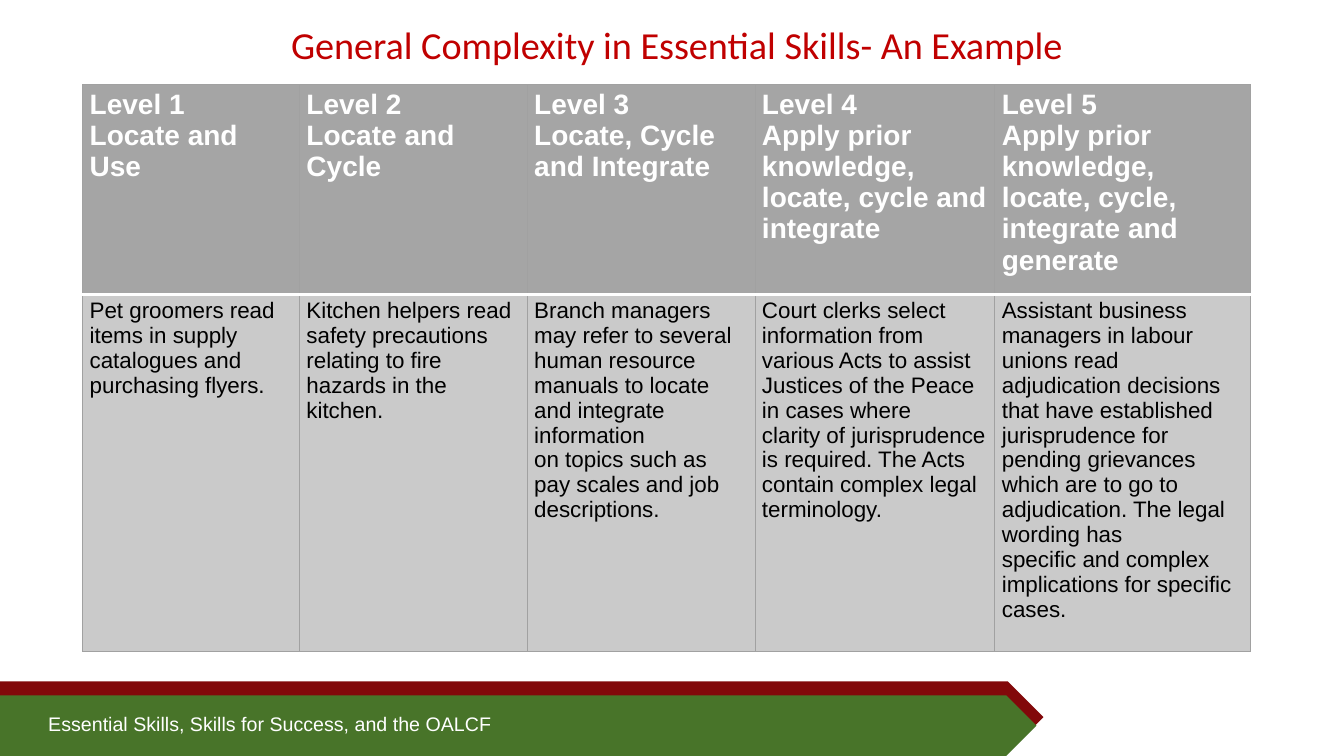
from pptx import Presentation
from pptx.dml.color import RGBColor
from pptx.enum.shapes import MSO_SHAPE
from pptx.enum.text import MSO_ANCHOR, MSO_AUTO_SIZE, PP_ALIGN
from pptx.oxml.ns import qn
from pptx.util import Inches, Pt
from lxml.etree import SubElement

SLIDE_WIDTH, SLIDE_HEIGHT = Inches(13.33), Inches(7.5)
WHITE = RGBColor(0xFF, 0xFF, 0xFF)
BLACK = RGBColor(0x00, 0x00, 0x00)
TITLE_RED = RGBColor(0xC0, 0x00, 0x00)
DARK_RED = RGBColor(0x82, 0x08, 0x0A)
GREEN = RGBColor(0x48, 0x74, 0x29)
HEADER_GRAY = RGBColor(0xA5, 0xA5, 0xA5)
BODY_GRAY = RGBColor(0xCA, 0xCA, 0xCA)
BORDER_GRAY = RGBColor(0xA1, 0xA1, 0xA1)

COLUMN_SHARES = [16.13, 16.95, 16.95, 17.85, 19.05]
ROW_SHARES = [27.73, 47.2]
LEVELS = [
    ("Level 1\nLocate and Use",
     "Pet groomers read items in supply catalogues and purchasing flyers."),
    ("Level 2\nLocate and Cycle",
     "Kitchen helpers read safety precautions relating to fire hazards in the kitchen."),
    ("Level 3\nLocate, Cycle and Integrate",
     "Branch managers may refer to several human resource manuals to locate "
     "and integrate information\n"
     "on topics such as pay scales and job descriptions."),
    ("Level 4\nApply prior knowledge, locate, cycle and integrate",
     "Court clerks select information from various Acts to assist Justices "
     "of the Peace in cases where\n"
     "clarity of jurisprudence is required. The Acts contain complex legal terminology."),
    ("Level 5\nApply prior knowledge, locate, cycle, integrate and generate",
     "Assistant business managers in labour unions read adjudication decisions "
     "that have established\n"
     "jurisprudence for pending grievances which are to go to adjudication. "
     "The legal wording has\n"
     "specific and complex implications for specific cases."),
]


def across(percent):
    """Return a percentage of the slide's width."""
    return int(SLIDE_WIDTH * percent / 100)


def down(percent):
    """Return a percentage of the slide's height."""
    return int(SLIDE_HEIGHT * percent / 100)


def area(left, top, width, height):
    """Return a box given as percentages of the slide."""
    return across(left), down(top), across(width), down(height)


def style_text(text_frame, size, color, name="Arial", bold=False):
    """Set one font on every paragraph of a text frame."""
    for paragraph in text_frame.paragraphs:
        font = paragraph.font
        font.name, font.size, font.bold = name, Pt(size), bold
        font.color.rgb = color


def add_title(slide, text):
    """Fill and place the title placeholder."""
    title = slide.shapes.title
    title.left, title.top, title.width, title.height = area(15.3, 3.07, 70.14, 6.4)
    text_frame = title.text_frame
    text_frame.text = text
    text_frame.auto_size = MSO_AUTO_SIZE.NONE
    text_frame.vertical_anchor = MSO_ANCHOR.BOTTOM
    text_frame.paragraphs[0].alignment = PP_ALIGN.CENTER
    text_frame.paragraphs[0].line_spacing = 0.8
    style_text(text_frame, 27.3, TITLE_RED, "Calibri")


def add_banner(slide, box, color):
    """Add a plain pentagon arrow along the bottom."""
    banner = slide.shapes.add_shape(MSO_SHAPE.PENTAGON, *box)
    banner.shadow.inherit = False
    banner.fill.solid()
    banner.fill.fore_color.rgb = color
    banner.line.fill.background()


def add_label(slide, box, text):
    """Add the white footer text."""
    text_frame = slide.shapes.add_textbox(*box).text_frame
    text_frame.word_wrap = True
    text_frame.text = text
    style_text(text_frame, 14, WHITE)


def add_border(cell, side, color, width):
    """Draw one side of a table cell."""
    properties = cell._tc.get_or_add_tcPr()
    line = SubElement(properties, qn(f"a:ln{side}"), w=str(Pt(width)))
    fill = SubElement(line, qn("a:solidFill"))
    SubElement(fill, qn("a:srgbClr"), val=str(color))


def fill_cell(cell, text, is_header):
    """Write and format one table cell."""
    cell.text = text
    cell.margin_left = cell.margin_right = Inches(0.07)
    cell.margin_top = cell.margin_bottom = Inches(0.04)
    divider = "B" if is_header else "T"
    for side in "LRTB":
        if side == divider:
            add_border(cell, side, WHITE, 2)
        else:
            add_border(cell, side, BORDER_GRAY, 0.75)
    cell.fill.solid()
    cell.fill.fore_color.rgb = HEADER_GRAY if is_header else BODY_GRAY
    if is_header:
        style_text(cell.text_frame, 20, WHITE, bold=True)
    else:
        style_text(cell.text_frame, 16, BLACK)


def add_levels_table(slide):
    """Add the table with one column per level."""
    box = area(6.15, 11.2, sum(COLUMN_SHARES), sum(ROW_SHARES))
    table = slide.shapes.add_table(len(ROW_SHARES), len(LEVELS), *box).table
    table.horz_banding = False
    for row, share in zip(table.rows, ROW_SHARES):
        row.height = down(share)
    for index, (share, texts) in enumerate(zip(COLUMN_SHARES, LEVELS)):
        table.columns[index].width = across(share)
        for row_index, text in enumerate(texts):
            fill_cell(table.cell(row_index, index), text, row_index == 0)


def main():
    """Build and save the slide."""
    presentation = Presentation()
    presentation.slide_width, presentation.slide_height = SLIDE_WIDTH, SLIDE_HEIGHT
    slide = presentation.slides.add_slide(presentation.slide_layouts[5])
    add_banner(slide, area(0, 90.13, 77.64, 9.47), DARK_RED)
    add_banner(slide, area(0, 92, 77.12, 8), GREEN)
    add_label(slide, area(2.85, 93.47, 70.29, 4.53),
              "Essential Skills, Skills for Success, and the OALCF")
    add_title(slide, "General Complexity in Essential Skills- An Example")
    add_levels_table(slide)
    presentation.save("out.pptx")


if __name__ == "__main__":
    main()
